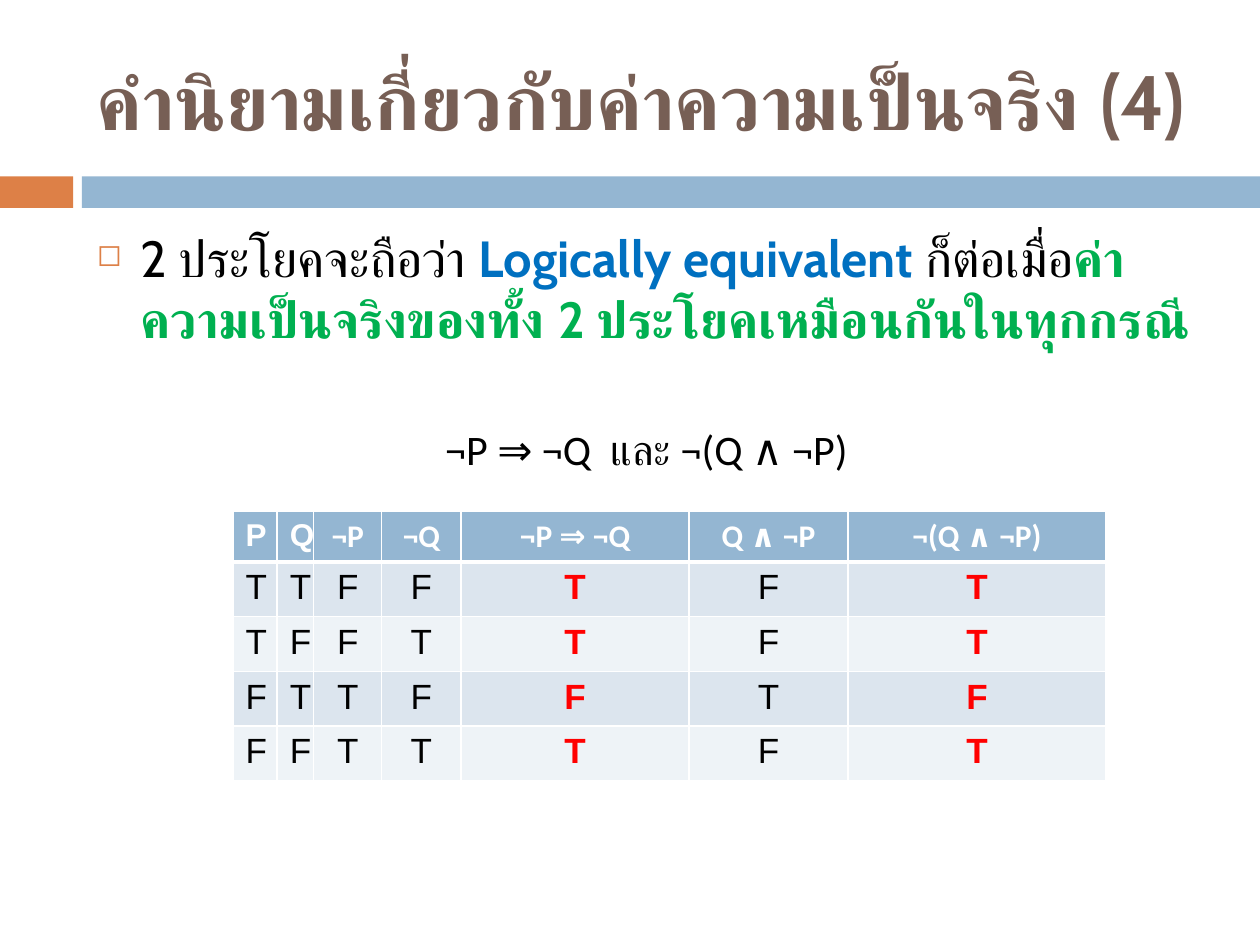
"""Builds a slide on logical equivalence with its truth table."""
import pptx
import pptx.dml.color
import pptx.enum.shapes
import pptx.enum.text
import pptx.oxml
import pptx.oxml.ns
import pptx.util
from pptx.util import Inches

COLORS = {
    "orange": "DD8047", "blue": "94B6D2", "brown": "775F55", "black": "000000",
    "link": "0070C0", "green": "00B050", "red": "FF0000", "white": "FFFFFF",
    "odd": "DCE5EE", "even": "EEF3F7",
}
CENTER = pptx.enum.text.PP_ALIGN.CENTER
HEADERS = ["P", "Q", "¬P", "¬Q", "¬P ⇒ ¬Q", "Q ∧ ¬P", "¬(Q ∧ ¬P)"]
TRUTH_ROWS = ["TTFFTFT", "TFFTTFT", "FTTFFTF", "FFTTTFT"]
COLUMN_WIDTHS = [0.35, 0.29, 0.54, 0.63, 1.81, 1.26, 2.05]
RESULT_COLUMNS = (4, 6)
DEFINITION = [
    ("2 ประโยคจะถือว่า ", "black", False),
    ("Logically equivalent ", "link", True),
    ("ก็ต่อเมื่อ", "black", False),
    ("ค่าความเป็นจริงของทั้ง 2 ประโยคเหมือนกันในทุกกรณี", "green", True),
]


def rgb(name):
    return pptx.dml.color.RGBColor.from_string(COLORS[name])


def set_font(font, name, size, color, bold=False):
    font.name, font.size, font.bold = name, pptx.util.Pt(size), bold
    font.color.rgb = rgb(color)


def add_band(page, left, width, color):
    band = page.shapes.add_shape(
        pptx.enum.shapes.MSO_SHAPE.RECTANGLE,
        Inches(left), Inches(1.4), Inches(width), Inches(0.25))
    band.shadow.inherit = False
    band.fill.solid()
    band.fill.fore_color.rgb = rgb(color)
    band.line.fill.background()


def add_text_frame(page, top, height):
    box = page.shapes.add_textbox(Inches(0.67), Inches(top), Inches(8.92), Inches(height))
    box.text_frame.word_wrap = True
    return box.text_frame


def add_title(page):
    frame = add_text_frame(page, 0.25, 1.08)
    frame.vertical_anchor = pptx.enum.text.MSO_ANCHOR.MIDDLE
    para = frame.paragraphs[0]
    para.text = "คำนิยามเกี่ยวกับค่าความเป็นจริง (4)"
    set_font(para.font, "Cabin", 44, "brown", True)


def format_paragraph(para, space_before):
    para.space_before = pptx.util.Pt(space_before)
    properties = para._p.get_or_add_pPr()
    properties.set("marL", str(Inches(0.35)))
    properties.set("indent", str(-Inches(0.35)))
    return properties


def add_bullet(properties):
    namespace = pptx.oxml.ns.nsdecls("a")
    for markup in (
        f'<a:buClr {namespace}><a:srgbClr val="{COLORS["orange"]}"/></a:buClr>',
        f'<a:buSzPct {namespace} val="60000"/>',
        f'<a:buChar {namespace} char="◻"/>',
    ):
        properties.append(pptx.oxml.parse_xml(markup))


def add_body(page):
    frame = add_text_frame(page, 1.75, 4.92)
    para = frame.paragraphs[0]
    add_bullet(format_paragraph(para, 7))
    for text, color, bold in DEFINITION:
        span = para.add_run()
        span.text = text
        set_font(span.font, "Cabin", 29, color, bold)
    formula = frame.add_paragraph()
    formula.text = "¬P ⇒ ¬Q  และ ¬(Q ∧ ¬P)"
    formula.alignment = CENTER
    format_paragraph(formula, 43)
    set_font(formula.font, "Calibri", 24, "black")


def add_borders(cell, bottom_width):
    properties = cell._tc.get_or_add_tcPr()
    widths = {"lnL": 1, "lnR": 1, "lnT": 1, "lnB": bottom_width}
    for position, (side, width) in enumerate(widths.items()):
        properties.insert(position, pptx.oxml.parse_xml(
            f'<a:{side} {pptx.oxml.ns.nsdecls("a")} w="{pptx.util.Pt(width)}">'
            f'<a:solidFill><a:srgbClr val="{COLORS["white"]}"/></a:solidFill></a:{side}>'))


def fill_cell(cell, text, fill, font, bottom_width=1):
    cell.fill.solid()
    cell.fill.fore_color.rgb = rgb(fill)
    add_borders(cell, bottom_width)
    para = cell.text_frame.paragraphs[0]
    para.text = text
    para.alignment = CENTER
    set_font(para.font, *font)


def add_truth_table(page):
    table = page.shapes.add_table(
        len(TRUTH_ROWS) + 1, len(HEADERS),
        Inches(1.85), Inches(4.06), Inches(6.93), Inches(2.12)).table
    for column, width in zip(table.columns, COLUMN_WIDTHS):
        column.width = Inches(width)
    for index, row in enumerate(table.rows):
        row.height = Inches(0.43 if index else 0.4)
    for column, text in enumerate(HEADERS):
        font = "Arial" if len(text) == 1 else "Calibri"
        fill_cell(table.cell(0, column), text, "blue", (font, 18, "white", True), 3)
    for row, values in enumerate(TRUTH_ROWS, 1):
        for column, value in enumerate(values):
            result = column in RESULT_COLUMNS
            fill_cell(table.cell(row, column), value, "odd" if row % 2 else "even",
                      ("Arial", 20, "red" if result else "black", result))


def main():
    deck = pptx.Presentation()
    deck.slide_width, deck.slide_height = Inches(10), Inches(7.5)
    page = deck.slides.add_slide(deck.slide_layouts[6])
    add_band(page, 0, 0.58, "orange")
    add_band(page, 0.65, 9.35, "blue")
    add_title(page)
    add_body(page)
    add_truth_table(page)
    deck.save("out.pptx")


if __name__ == "__main__":
    main()
